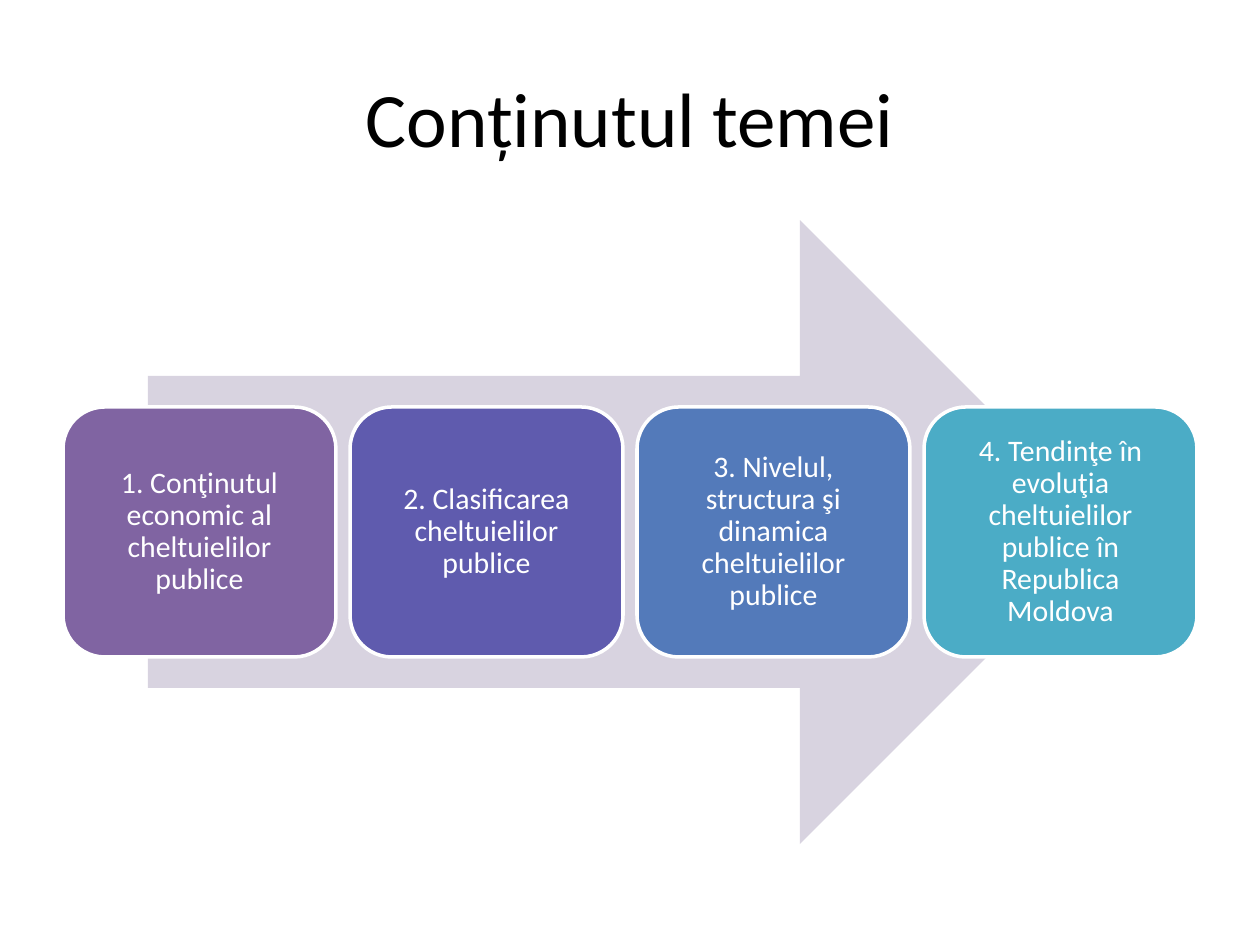
from pptx import Presentation
from pptx.dml.color import RGBColor
from pptx.enum.shapes import MSO_SHAPE
from pptx.enum.text import MSO_ANCHOR, PP_ALIGN
from pptx.util import Pt

ARROW, CARD = MSO_SHAPE.RIGHT_ARROW, MSO_SHAPE.ROUNDED_RECTANGLE
MIDDLE, CENTER = MSO_ANCHOR.MIDDLE, PP_ALIGN.CENTER

# Content
TITLE = "Conținutul temei"
TOPICS = [
    ("1. Conţinutul economic al cheltuielilor publice", "8064A2"),
    ("2. Clasificarea cheltuielilor publice", "5F5BAE"),
    ("3. Nivelul, structura şi dinamica cheltuielilor publice", "537ABA"),
    ("4. Tendinţe în evoluţia cheltuielilor publice în Republica Moldova", "4BACC6"),
]

THEME = {
    "font": "Calibri",
    "title_size": 44, "topic_size": 17,
    "title_color": "000000", "topic_color": "FFFFFF",
    "arrow": "D8D3E0", "border": "FFFFFF", "border_width": 2,
}

# Layout in px, 126 to the inch
SCALE = 914400 / 126
SLIDE_SIZE = (1260, 945)
TITLE_BOX = (63, 38, 1134, 157)
ARROW_BOX = (148, 220, 964, 624)
ROW_LEFT, ROW_TOP, ROW_WIDTH = 63, 407, 1134
CARD_HEIGHT, CARD_GAP, CARD_MARGIN = 250, 14, 9


def px(value):
    return round(value * SCALE)


def write_text(shape, text, *, size, color, margin, line_spacing=1.0):
    frame = shape.text_frame
    frame.word_wrap = True
    frame.vertical_anchor = MIDDLE
    frame.margin_left = frame.margin_right = px(margin)
    frame.margin_top = frame.margin_bottom = px(margin)
    paragraph = frame.paragraphs[0]
    paragraph.alignment = CENTER
    paragraph.line_spacing = line_spacing
    run = paragraph.add_run()
    run.text = text
    run.font.name = THEME["font"]
    run.font.size = Pt(size)
    run.font.color.rgb = RGBColor.from_string(color)


def add_shape(slide, kind, box, fill, border=None):
    shape = slide.shapes.add_shape(kind, *map(px, box))
    shape.shadow.inherit = False
    shape.fill.solid()
    shape.fill.fore_color.rgb = RGBColor.from_string(fill)
    if border:
        shape.line.color.rgb = RGBColor.from_string(border)
        shape.line.width = Pt(THEME["border_width"])
    else:
        shape.line.fill.background()
    return shape


def main():
    deck = Presentation()
    deck.slide_width, deck.slide_height = map(px, SLIDE_SIZE)
    slide = deck.slides.add_slide(deck.slide_layouts[6])

    # Title
    title = slide.shapes.add_textbox(*map(px, TITLE_BOX))
    write_text(title, TITLE, size=THEME["title_size"],
               color=THEME["title_color"], margin=6)

    # Arrow behind the topics
    add_shape(slide, ARROW, ARROW_BOX, THEME["arrow"])

    # Row of topic cards
    count = len(TOPICS)
    card_width = (ROW_WIDTH - (count - 1) * CARD_GAP) / count
    for index, (topic, fill) in enumerate(TOPICS):
        left = ROW_LEFT + index * (card_width + CARD_GAP)
        card = add_shape(slide, CARD, (left, ROW_TOP, card_width, CARD_HEIGHT),
                         fill, border=THEME["border"])
        write_text(card, topic, size=THEME["topic_size"],
                   color=THEME["topic_color"], margin=CARD_MARGIN,
                   line_spacing=0.9)

    deck.save("out.pptx")


if __name__ == "__main__":
    main()
